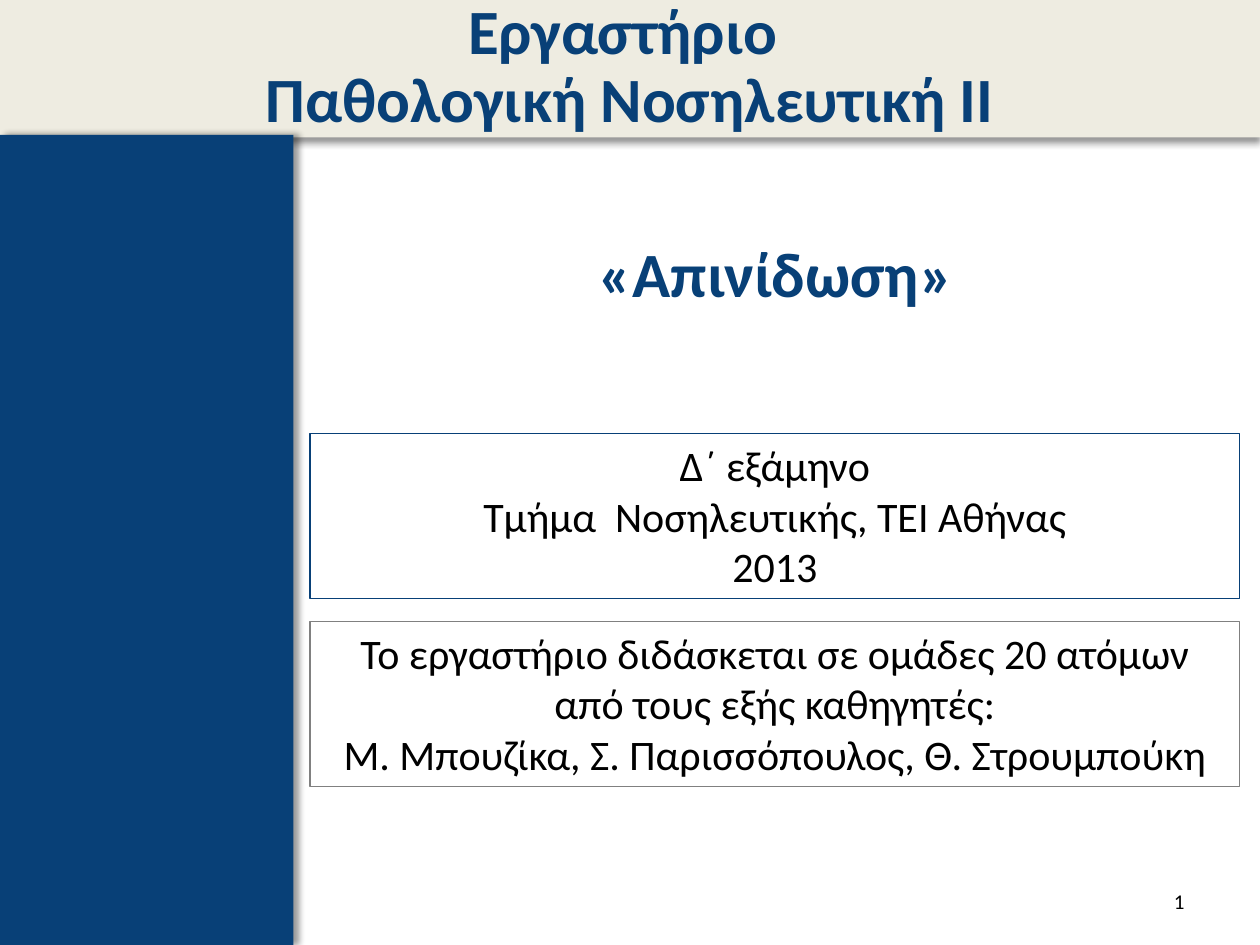
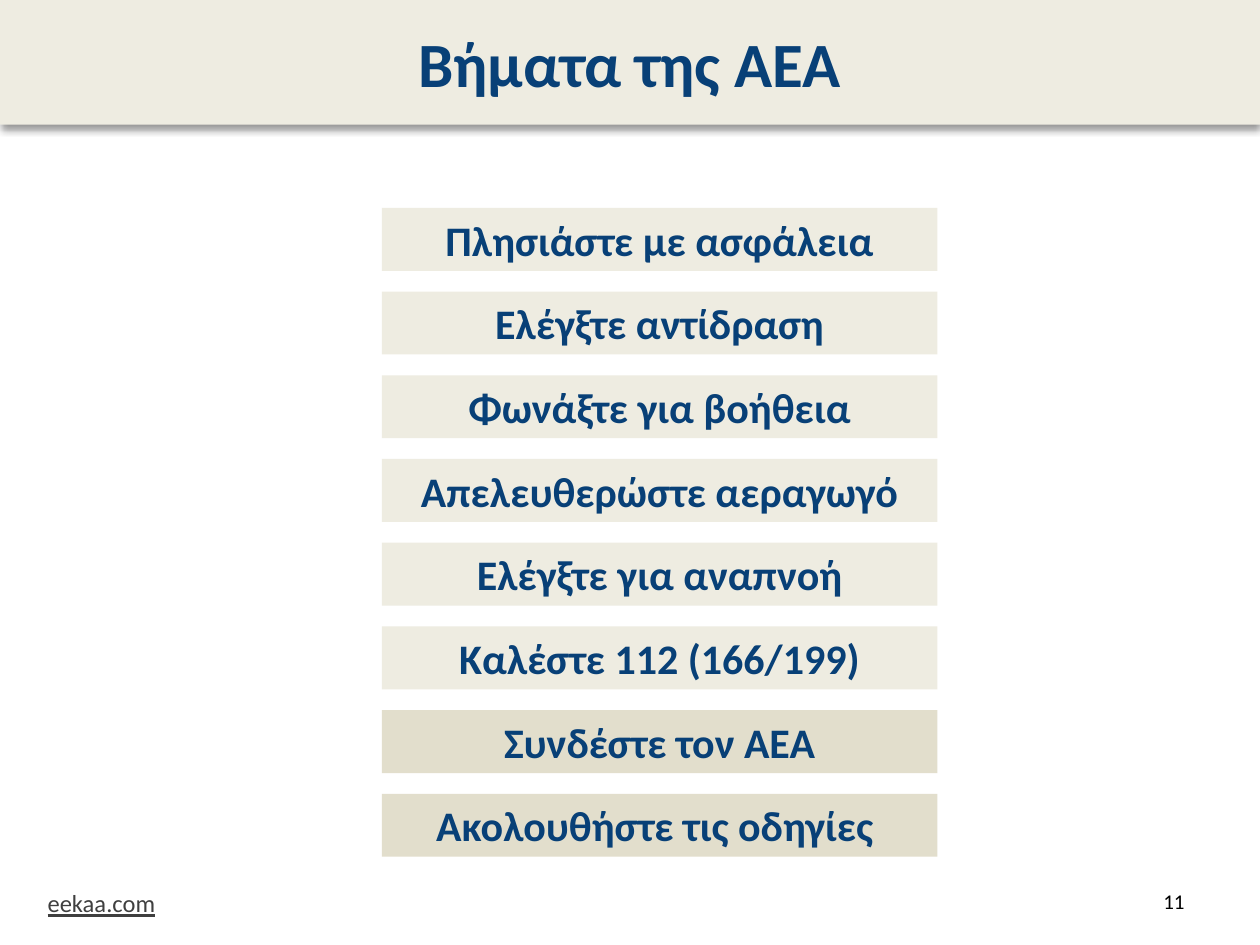
from lxml import etree
from pptx import Presentation
from pptx.dml.color import RGBColor
from pptx.enum import shapes, text
from pptx.oxml import ns
from pptx.util import Inches, Pt

COLORS = {
    "navy": "084077",
    "cream": "EEECE1",
    "sand": "E2DECC",
    "gray": "808080",
    "link": "3F3F3F",
    "black": "000000",
}
FONT = "Calibri"
ALIGN = text.PP_ALIGN
ANCHOR = text.MSO_ANCHOR
DOWN, RIGHT = 90, 0


def color(name):
    return RGBColor.from_string(COLORS[name])


def write(shape, lines, size, tone="black", bold=False, align=ALIGN.CENTER,
          anchor=ANCHOR.TOP, wrap=True, underline=None, spacing=None):
    frame = shape.text_frame
    frame.word_wrap = wrap
    frame.vertical_anchor = anchor
    frame.text = "\n".join(lines)
    for para in frame.paragraphs:
        para.alignment = align
        para.line_spacing = spacing
        for span in para.runs:
            font = span.font
            font.name, font.size, font.bold = FONT, Pt(size), bold
            font.underline = underline
            font.color.rgb = color(tone)


def add_label(page, box, lines, size, **style):
    label = page.shapes.add_textbox(*map(Inches, box))
    write(label, lines, size, **style)


def add_panel(page, box, fill=None, line=None, shadow=None):
    panel = page.shapes.add_shape(shapes.MSO_SHAPE.RECTANGLE, *map(Inches, box))
    if fill:
        panel.fill.solid()
        panel.fill.fore_color.rgb = color(fill)
    else:
        panel.fill.background()
    if line:
        panel.line.color.rgb = color(line)
        panel.line.width = Pt(0.75)
    else:
        panel.line.fill.background()
    panel.shadow.inherit = False
    if shadow is not None:
        cast_shadow(panel, shadow)
    return panel


def cast_shadow(panel, degrees):
    effects = panel.element.spPr.find(ns.qn("a:effectLst"))
    outer = etree.SubElement(effects, ns.qn("a:outerShdw"), blurRad=str(Pt(4)),
                             dist=str(Pt(3)), dir=str(degrees * 60000),
                             algn="ctr", rotWithShape="0")
    tint = etree.SubElement(outer, ns.qn("a:srgbClr"), val=COLORS["black"])
    etree.SubElement(tint, ns.qn("a:alpha"), val="40000")


def add_title_band(page, box, title, spacing=None):
    band = add_panel(page, box, fill="cream", shadow=DOWN)
    write(band, [title], 36, tone="navy", bold=True, anchor=ANCHOR.MIDDLE,
          spacing=spacing)


def add_page_number(page, number):
    add_label(page, (7.17, 6.95, 2.33, 0.4), [str(number)], 12,
              align=ALIGN.RIGHT, anchor=ANCHOR.MIDDLE)


def add_steps(page, box, steps, step_height, highlighted):
    left, top, width, height = box
    pitch = (height - step_height) / (len(steps) - 1)
    for index, step in enumerate(steps):
        fill = "sand" if step in highlighted else "cream"
        bar = add_panel(page, (left, top + index * pitch, width, step_height), fill)
        write(bar, [step], 24, tone="navy", bold=True)


def build_cover(page):
    add_title_band(page, (0, -0.01, 10, 1.1),
                   "Εργαστήριο \vΠαθολογική Νοσηλευτική ΙΙ", spacing=0.9)
    add_panel(page, (0, 1.07, 2.33, 6.43), fill="navy", shadow=RIGHT)
    add_label(page, (2.33, 1.81, 7.66, 1), ["«Απινίδωση»"], 36,
              tone="navy", bold=True)
    notices = [
        (3.44, "navy", ["Δ΄ εξάμηνο", "Τμήμα  Νοσηλευτικής, ΤΕΙ Αθήνας", "2013"]),
        (4.93, "gray", [
            "Το εργαστήριο διδάσκεται σε ομάδες 20 ατόμων από τους εξής καθηγητές:",
            "Μ. Μπουζίκα, Σ. Παρισσόπουλος, Θ. Στρουμπούκη"]),
    ]
    for top, line, lines in notices:
        write(add_panel(page, (2.46, top, 7.38, 1.31), line=line), lines, 24)
    add_page_number(page, 1)


def build_steps_slide(page):
    add_title_band(page, (0, 0, 10, 0.99), "Βήματα της ΑΕΑ")
    device_steps = ["Συνδέστε τον ΑΕΑ", "Ακολουθήστε τις οδηγίες "]
    first_steps = [
        "Πλησιάστε με ασφάλεια",
        "Ελέγξτε αντίδραση",
        "Φωνάξτε για βοήθεια",
        "Απελευθερώστε αεραγωγό",
        "Ελέγξτε για αναπνοή",
        "Καλέστε 112 (166/199)",
    ]
    add_steps(page, (3.03, 1.65, 4.41, 5.15), first_steps + device_steps,
              0.5, device_steps)
    add_label(page, (0.28, 7, 1.06, 0.34), ["eekaa.com"], 14, tone="link",
              align=ALIGN.LEFT, wrap=False, underline=True)
    add_page_number(page, 11)


def main():
    deck = Presentation()
    deck.slide_width, deck.slide_height = Inches(10), Inches(7.5)
    for build in (build_cover, build_steps_slide):
        build(deck.slides.add_slide(deck.slide_layouts[6]))
    deck.save("out.pptx")


if __name__ == "__main__":
    main()
